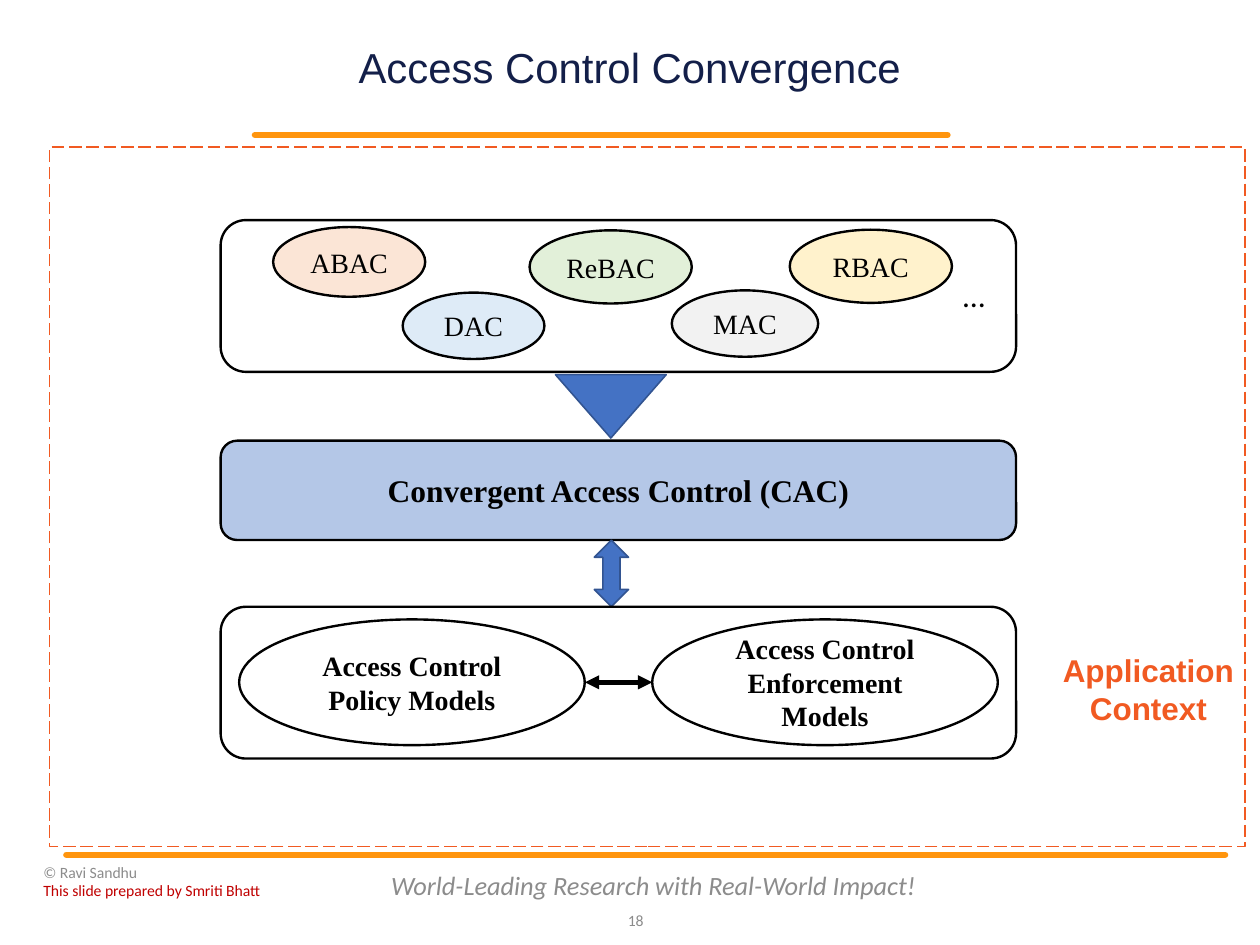
from pptx import Presentation
from pptx.dml.color import RGBColor
from pptx.enum.dml import MSO_LINE
from pptx.enum.shapes import MSO_CONNECTOR, MSO_SHAPE
from pptx.enum.text import MSO_ANCHOR, PP_ALIGN
from pptx.oxml.ns import qn
from pptx.util import Pt
from lxml import etree

ELLIPSE, PANEL = MSO_SHAPE.OVAL, MSO_SHAPE.ROUNDED_RECTANGLE
UP_ARROW, UP_DOWN_ARROW = MSO_SHAPE.UP_ARROW, MSO_SHAPE.UP_DOWN_ARROW
FRAME = MSO_SHAPE.RECTANGLE
STRAIGHT, LONG_DASH = MSO_CONNECTOR.STRAIGHT, MSO_LINE.LONG_DASH
LEFT, CENTER, RIGHT = PP_ALIGN.LEFT, PP_ALIGN.CENTER, PP_ALIGN.RIGHT
TOP, MIDDLE = MSO_ANCHOR.TOP, MSO_ANCHOR.MIDDLE

SERIF, SANS, FOOTER_FONT = "Times New Roman", "Arial", "Calibri"
COLORS = {
    "black": "000000", "white": "FFFFFF", "navy": "131F49",
    "rule": "FF950E", "context": "F15A22", "gray": "8C8C8C", "red": "C00000",
    "arrow": "4472C4", "arrow edge": "325491", "convergent": "B4C7E7",
    "abac": "FBE5D6", "rebac": "E2F0D9", "rbac": "FFF2CC",
    "dac": "DEEBF7", "mac": "F2F2F2",
}
STACK_LEFT, STACK_WIDTH = 139, 501.1
PANEL_HEIGHT = 95.6
POLICY_WIDTH, POLICY_HEIGHT = 217.7, 79.2

MODELS = [  # label, left, top, width, height
    ("ABAC", 172.1, 143, 95.8, 43.9),
    ("ReBAC", 333.6, 145.1, 102.2, 46.1),
    ("RBAC", 497.5, 144.7, 102.2, 46.1),
    ("DAC", 253.7, 184.3, 89.3, 41.8),
    ("MAC", 423.2, 182.9, 92.2, 41.8),
]


def rgb(name):
    return RGBColor.from_string(COLORS[name])


def write(shape, lines, size, font, color="black", align=CENTER, anchor=MIDDLE,
          bold=False, italic=False, wrap=True, margins=(7.2, 3.6)):
    """Fill a shape with lines, each a string or a (string, colour) pair."""
    frame = shape.text_frame
    frame.word_wrap = wrap
    frame.vertical_anchor = anchor
    frame.margin_left = frame.margin_right = Pt(margins[0])
    frame.margin_top = frame.margin_bottom = Pt(margins[1])
    for index, line in enumerate(lines):
        words, line_color = (line, color) if isinstance(line, str) else line
        paragraph = frame.add_paragraph() if index else frame.paragraphs[0]
        paragraph.alignment = align
        run = paragraph.add_run()
        run.text = words
        run.font.size, run.font.name = Pt(size), font
        run.font.bold, run.font.italic = bold, italic
        run.font.color.rgb = rgb(line_color)
    return frame


def add_label(slide, box, lines, size, font, **style):
    label = slide.shapes.add_textbox(*map(Pt, box))
    return write(label, lines, size, font, **style)


def add_block(slide, kind, box, fill=None, edge="black", weight=1.5):
    block = slide.shapes.add_shape(kind, *map(Pt, box))
    block.shadow.inherit = False
    if fill:
        block.fill.solid()
        block.fill.fore_color.rgb = rgb(fill)
    else:
        block.fill.background()
    if edge:
        block.line.color.rgb = rgb(edge)
        block.line.width = Pt(weight)
    else:
        block.line.fill.background()
    return block


def add_line(slide, start, end, y, color, weight, arrows=False):
    """Draw a level line, with arrowheads at both ends or with round caps."""
    line = slide.shapes.add_connector(STRAIGHT, Pt(start), Pt(y), Pt(end), Pt(y))
    line.line.color.rgb = rgb(color)
    line.line.width = Pt(weight)
    stroke = line.line._get_or_add_ln()
    if arrows:
        for end_tag in ("a:headEnd", "a:tailEnd"):
            etree.SubElement(stroke, qn(end_tag), type="triangle")
    else:
        stroke.set("cap", "rnd")
    etree.SubElement(line._element.spPr, qn("a:effectLst"))


def add_master_parts(slide):
    add_line(slide, 160.6, 596.9, 85, "rule", 4)
    add_line(slide, 41.8, 771.8, 538.4, "rule", 4)
    add_label(slide, (238.3, 541.4, 346.3, 31.7),
              ["World-Leading Research with Real-World Impact!"],
              16.6, FOOTER_FONT, color="gray", italic=True)
    add_label(slide, (380.9, 563.6, 31.7, 31.7), ["18"], 9.9, FOOTER_FONT,
              color="gray", align=RIGHT)
    title = add_label(slide, (188.4, 23.8, 416.9, 40.3),
                      ["Access Control Convergence"], 26.4, SANS,
                      color="navy", margins=(0, 0))
    title.paragraphs[0].line_spacing = 0.9
    add_label(slide, (20.2, 543.2, 218.2, 25),
              ["© Ravi Sandhu", ("This slide prepared by Smriti Bhatt", "red")],
              9.9, FOOTER_FONT, color="gray", align=LEFT, anchor=TOP,
              margins=(7.2, 0))


def add_models(slide):
    add_block(slide, PANEL, (STACK_LEFT, 138.6, STACK_WIDTH, PANEL_HEIGHT))
    for label, *box in MODELS:
        ellipse = add_block(slide, ELLIPSE, box, fill=label.lower())
        write(ellipse, [label], 17.6, SERIF, margins=(0, 0))
    add_label(slide, (599.6, 170.4, 35.3, 31), ["…"], 19.8, FOOTER_FONT,
              align=LEFT, anchor=TOP)


def add_convergence(slide):
    convergent = add_block(slide, PANEL, (STACK_LEFT, 277.6, STACK_WIDTH, 62.6),
                           fill="convergent")
    write(convergent, ["Convergent Access Control (CAC)"], 19.8, SERIF, bold=True)
    funnel = add_block(slide, UP_ARROW, (349.9, 236, 69.8, 39.9),
                       fill="arrow", edge="arrow edge", weight=1)
    funnel.rotation = 180
    funnel.adjustments[0], funnel.adjustments[1] = 0.5, 1.55
    add_block(slide, UP_DOWN_ARROW, (374.4, 340.2, 21.6, 41.9),
              fill="arrow", edge="arrow edge", weight=1)


def add_policy_and_enforcement(slide):
    add_block(slide, PANEL, (STACK_LEFT, 382.2, STACK_WIDTH, PANEL_HEIGHT))
    for left, label in ((150.7, "Access Control Policy Models"),
                        (410.9, "Access Control Enforcement Models")):
        ellipse = add_block(slide, ELLIPSE,
                            (left, 390.2, POLICY_WIDTH, POLICY_HEIGHT))
        write(ellipse, [label], 17.6, SERIF, bold=True)
    add_line(slide, 368.5, 410.9, 429.8, "black", 3, arrows=True)


def add_application_context(slide):
    frame = add_block(slide, FRAME, (31.2, 92.6, 753.1, 440.6),
                      edge="context", weight=1)
    frame.line.dash_style = LONG_DASH
    context = add_block(slide, PANEL, (663.7, 414.4, 119.5, 38.9),
                        fill="white", edge=None)
    write(context, ["Application", "Context"], 19.8, SANS, color="context",
          bold=True, wrap=False, margins=(7.9, 4.3))


def main():
    deck = Presentation()
    deck.slide_width, deck.slide_height = Pt(793.75), Pt(595.25)
    slide = deck.slides.add_slide(deck.slide_layouts[6])
    add_master_parts(slide)
    add_models(slide)
    add_convergence(slide)
    add_policy_and_enforcement(slide)
    add_application_context(slide)
    deck.save("out.pptx")


if __name__ == "__main__":
    main()
